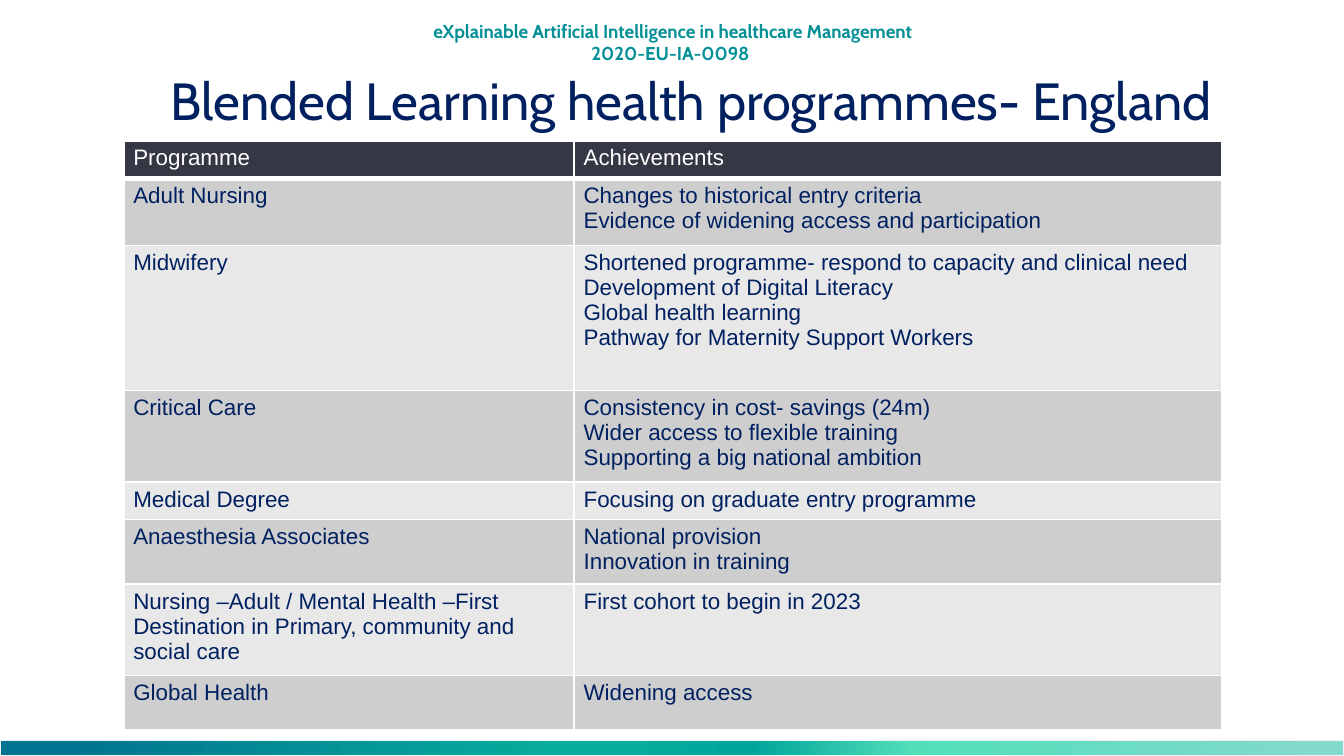
import pptx
import pptx.util
import pptx.dml.color
import pptx.enum.shapes
import pptx.enum.text
import pptx.oxml
import pptx.oxml.ns
from pptx.util import Cm

NAVY, TEAL, WHITE = "002060", "038F96", "FFFFFF"
DARK, BANDS = "353744", ("CECECF", "E8E8E9")
ALIGN = pptx.enum.text.PP_ALIGN
ANCHOR = pptx.enum.text.MSO_ANCHOR
NS = pptx.oxml.ns.nsdecls("a")

STOPS = [(0, "007490"), (5, "007490"), (43, "06AF9D"), (56, "00A59A"),
         (68, "51DFBA"), (99, "84D9CD"), (100, "84D9CD")]

COLS = [8.51, 12.24]
# Row height in cm, programme, achievements
ROWS = [
    (0.71, "Programme", "Achievements"),
    (1.27, "Adult Nursing",
     "Changes to historical entry criteria\n"
     "Evidence of widening access and participation"),
    (2.74, "Midwifery",
     "Shortened programme- respond to capacity and clinical need\n"
     "Development of Digital Literacy\n"
     "Global health learning\n"
     "Pathway for Maternity Support Workers"),
    (1.73, "Critical Care",
     "Consistency in cost- savings (24m)\n"
     "Wider access to flexible training\n"
     "Supporting a big national ambition"),
    (0.71, "Medical Degree", "Focusing on graduate entry programme"),
    (1.22, "Anaesthesia Associates",
     "National provision\nInnovation in training"),
    (1.73, "Nursing –Adult / Mental Health –First Destination in Primary, "
     "community and social care", "First cohort to begin in 2023"),
    (1.02, "Global Health", "Widening access"),
]


def rgb(code):
    return pptx.dml.color.RGBColor.from_string(code)


class Deck:
    """Holds the style and the current slide."""

    def __init__(self, head="Cabin", body="Arial"):
        self.head, self.body = head, body
        self.prs = pptx.Presentation()
        self.prs.slide_width, self.prs.slide_height = Cm(25.4), Cm(14.29)
        self.slide = self.prs.slides.add_slide(self.prs.slide_layouts[5])

    def style(self, frame, name, size, color, align, bold=False):
        for para in frame.paragraphs:
            para.alignment = align
            for run in para.runs:
                run.font.name, run.font.size = name, pptx.util.Pt(size)
                run.font.bold = bold
                run.font.color.rgb = rgb(color)

    def title(self, text, *box):
        shape = self.slide.shapes.title
        shape.left, shape.top, shape.width, shape.height = map(Cm, box)
        frame = shape.text_frame
        frame.text = text
        frame.word_wrap = True
        frame.auto_size = pptx.enum.text.MSO_AUTO_SIZE.NONE
        frame.vertical_anchor = ANCHOR.MIDDLE
        frame.paragraphs[0].line_spacing = 0.9
        self.style(frame, self.head, 28, NAVY, ALIGN.LEFT)

    def label(self, text, *box):
        frame = self.slide.shapes.add_textbox(*map(Cm, box)).text_frame
        frame.text = text
        frame.word_wrap = True
        self.style(frame, self.head, 10, TEAL, ALIGN.CENTER, True)

    def band(self, stops, *box):
        rect = pptx.enum.shapes.MSO_SHAPE.RECTANGLE
        shape = self.slide.shapes.add_shape(rect, *map(Cm, box))
        shape.shadow.inherit = False
        shape.line.color.rgb = rgb("F2F2F6")
        shape.line.width = pptx.util.Pt(0.75)
        shape.fill.gradient()
        shape.fill.gradient_angle = 0
        # A gradient with more than two stops needs XML
        group = shape.fill._fill._gradFill.find(pptx.oxml.ns.qn("a:gsLst"))
        group.clear()
        for pos, code in stops:
            group.append(pptx.oxml.parse_xml(
                f'<a:gs {NS} pos="{pos * 1000}"><a:srgbClr val="{code}"/></a:gs>'))

    def edges(self, cell, low):
        props = cell._tc.get_or_add_tcPr()
        for side, width in zip("LRTB", (1, 1, 1, low)):
            props.append(pptx.oxml.parse_xml(
                f'<a:ln{side} {NS} w="{width * 12700}"><a:solidFill>'
                f'<a:srgbClr val="{WHITE}"/></a:solidFill></a:ln{side}>'))

    def table(self, cols, rows, left, top):
        high = sum(row[0] for row in rows)
        table = self.slide.shapes.add_table(
            len(rows), len(cols), Cm(left), Cm(top),
            Cm(sum(cols)), Cm(high)).table
        for col, width in zip(table.columns, cols):
            col.width = Cm(width)
        for r, (height, *texts) in enumerate(rows):
            table.rows[r].height = Cm(height)
            for c, text in enumerate(texts):
                self.cell(table.cell(r, c), text, r)

    def cell(self, cell, text, row):
        cell.text_frame.text = text
        cell.margin_left = cell.margin_right = Cm(0.18)
        cell.margin_top = cell.margin_bottom = Cm(0.09)
        self.edges(cell, 1 if row else 3)
        cell.fill.solid()
        cell.fill.fore_color.rgb = rgb(BANDS[(row - 1) % 2] if row else DARK)
        self.style(cell.text_frame, self.body, 12,
                   NAVY if row else WHITE, ALIGN.LEFT)


def main():
    deck = Deck()
    # Project line and bottom band
    deck.label("eXplainable Artificial Intelligence in healthcare Management "
               "2020-EU-IA-0098 ", 7.87, 0.25, 9.68, 1.12)
    deck.band(STOPS, 0, 14, 25.4, 0.28)
    # Title and programme table
    deck.title("Blended Learning health programmes- England",
               2.97, 1.09, 21.89, 1.75)
    deck.table(COLS, ROWS, 2.34, 2.66)
    deck.prs.save("out.pptx")


if __name__ == "__main__":
    main()
